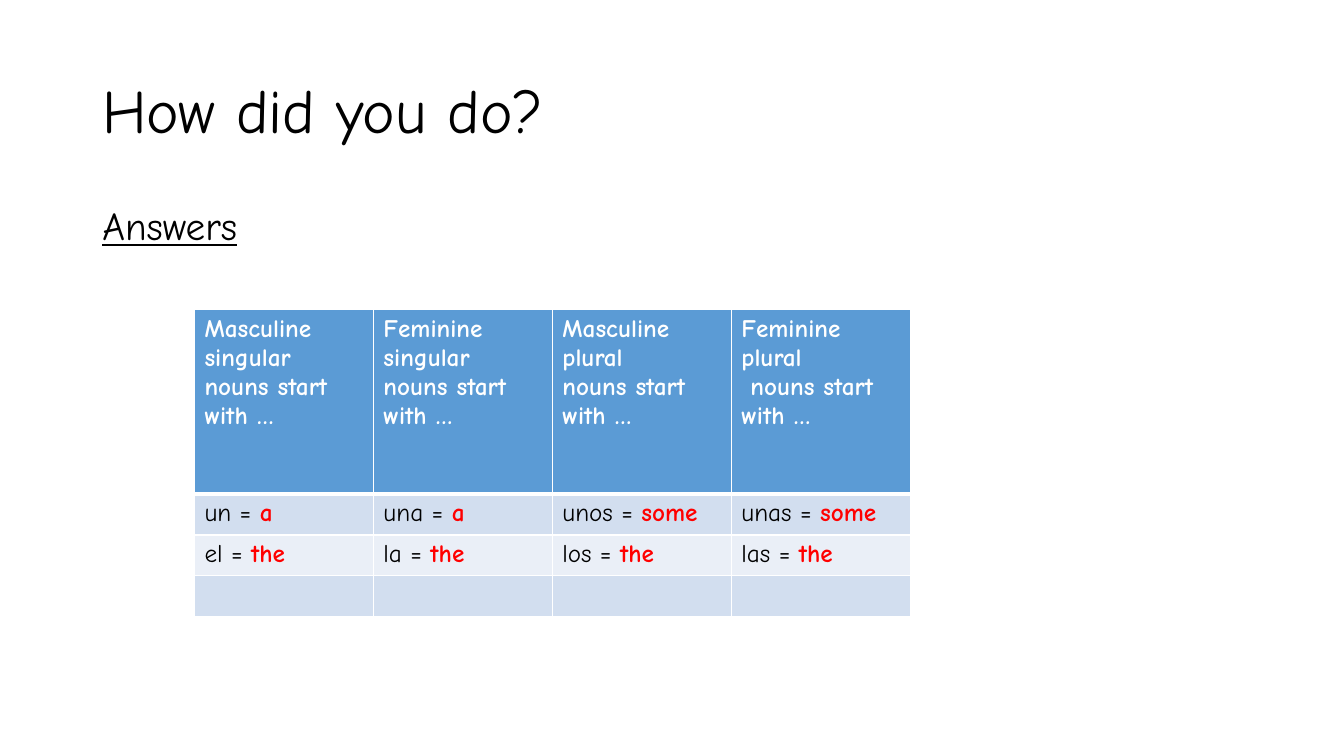
import lxml.etree
import pptx
import pptx.dml.color
import pptx.enum.text
import pptx.oxml.ns
import pptx.util

Cm = pptx.util.Cm
Pt = pptx.util.Pt

FONT = "Comic Neue"
TITLE = "How did you do?"
SUBTITLE = "Answers"
HEADINGS = [
    ["Masculine singular nouns start with …"],
    ["Feminine singular", "nouns start with …"],
    ["Masculine plural", "nouns start with …"],
    ["Feminine", "plural", " nouns start with …"],
]
ANSWERS = [
    [("un = ", "a"), ("una = ", "a"), ("unos = ", "some"), ("unas = ", "some")],
    [("el = ", "the"), ("la = ", "the"), ("los = ", "the"), ("las = ", "the")],
    [None] * 4,
]
HEADING_FILL = "5B9BD5"
BAND_FILLS = ["D2DEEF", "EAEFF7"]
WHITE, BLACK, RED = "FFFFFF", "000000", "FF0000"

TABLE_LEFT, TABLE_TOP = 4.9, 7.8
COLUMN_WIDTH, HEADING_HEIGHT, ROW_HEIGHT = 4.51, 4.65, 1.03


def color(value):
    return pptx.dml.color.RGBColor.from_string(value)


def style(font, size, value, bold=False, underline=False):
    font.name = FONT
    font.size = Pt(size)
    font.color.rgb = color(value)
    font.bold = bold
    font.underline = underline


def add_text(page, text, top, height, size, anchor, underline=False):
    box = page.shapes.add_textbox(Cm(2.33), Cm(top), Cm(29.21), Cm(height))
    box.text_frame.word_wrap = True
    box.text_frame.vertical_anchor = anchor
    para = box.text_frame.paragraphs[0]
    para.text = text
    para.line_spacing = 0.9
    style(para.font, size, BLACK, underline=underline)
    return para


def paint_cell(cell, value, bottom_width):
    properties = cell._tc.get_or_add_tcPr()
    for side, width in (("L", 1), ("R", 1), ("T", 1), ("B", bottom_width)):
        line = lxml.etree.SubElement(
            properties, pptx.oxml.ns.qn(f"a:ln{side}"), w=str(Pt(width)))
        solid = lxml.etree.SubElement(line, pptx.oxml.ns.qn("a:solidFill"))
        lxml.etree.SubElement(solid, pptx.oxml.ns.qn("a:srgbClr"), val=WHITE)
    cell.fill.solid()
    cell.fill.fore_color.rgb = color(value)


def add_answer_table(page):
    row_count, column_count = len(ANSWERS) + 1, len(HEADINGS)
    height = HEADING_HEIGHT + ROW_HEIGHT * len(ANSWERS)
    table = page.shapes.add_table(
        row_count, column_count, Cm(TABLE_LEFT), Cm(TABLE_TOP),
        Cm(COLUMN_WIDTH * column_count), Cm(height)).table
    for column in table.columns:
        column.width = Cm(COLUMN_WIDTH)
    for index, row in enumerate(table.rows):
        row.height = Cm(ROW_HEIGHT if index else HEADING_HEIGHT)

    for index, lines in enumerate(HEADINGS):
        cell = table.cell(0, index)
        paint_cell(cell, HEADING_FILL, 3)
        cell.text = "\n".join(lines)
        for para in cell.text_frame.paragraphs:
            style(para.font, 18, WHITE, bold=True)

    for row_index, answers in enumerate(ANSWERS):
        for column_index, answer in enumerate(answers):
            cell = table.cell(row_index + 1, column_index)
            paint_cell(cell, BAND_FILLS[row_index % 2], 1)
            if answer:
                para = cell.text_frame.paragraphs[0]
                for text, value in zip(answer, (BLACK, RED)):
                    span = para.add_run()
                    span.text = text
                    style(span.font, 18, value, bold=value == RED)


def main():
    deck = pptx.Presentation()
    deck.slide_width, deck.slide_height = Cm(33.87), Cm(19.05)
    page = deck.slides.add_slide(deck.slide_layouts[6])
    anchors = pptx.enum.text.MSO_ANCHOR
    add_text(page, TITLE, 1.01, 3.68, 44, anchors.MIDDLE)
    add_text(page, SUBTITLE, 5.07, 12.09, 28, anchors.TOP, underline=True).space_before = Pt(10)
    add_answer_table(page)
    deck.save("out.pptx")


if __name__ == "__main__":
    main()
